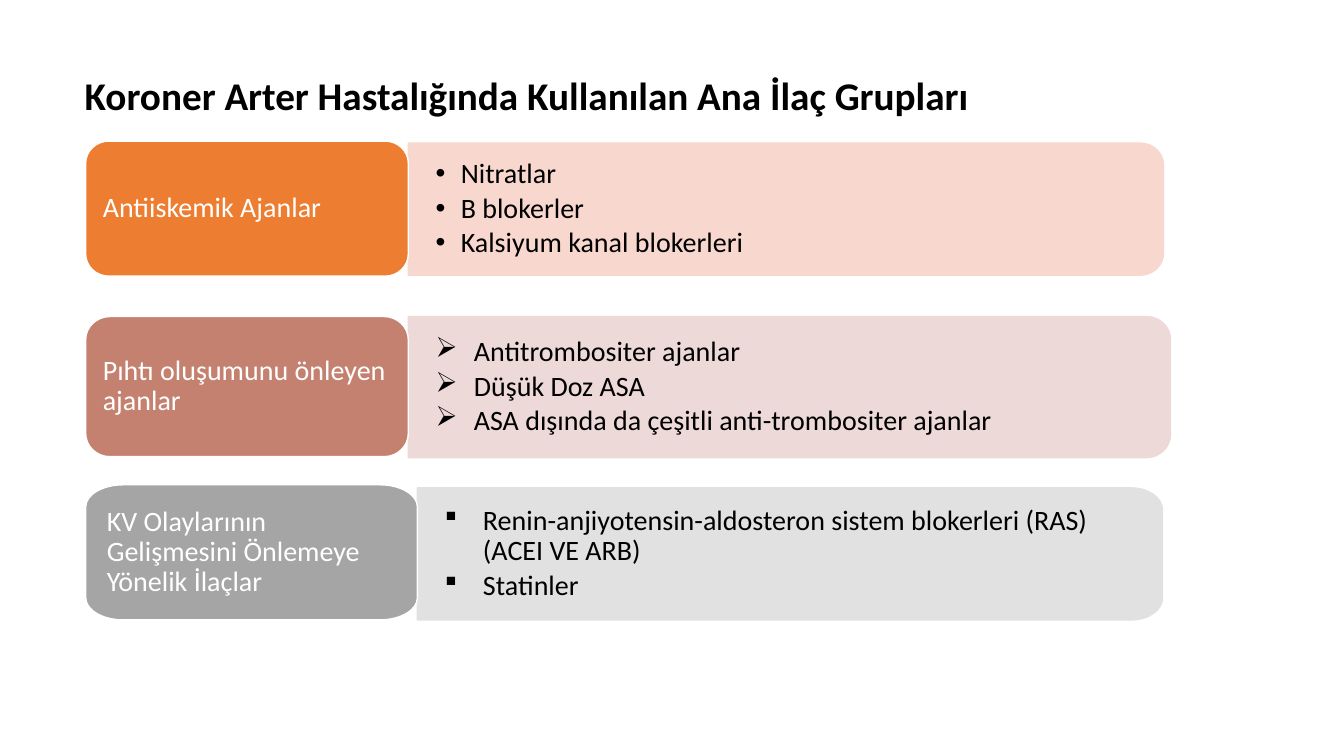
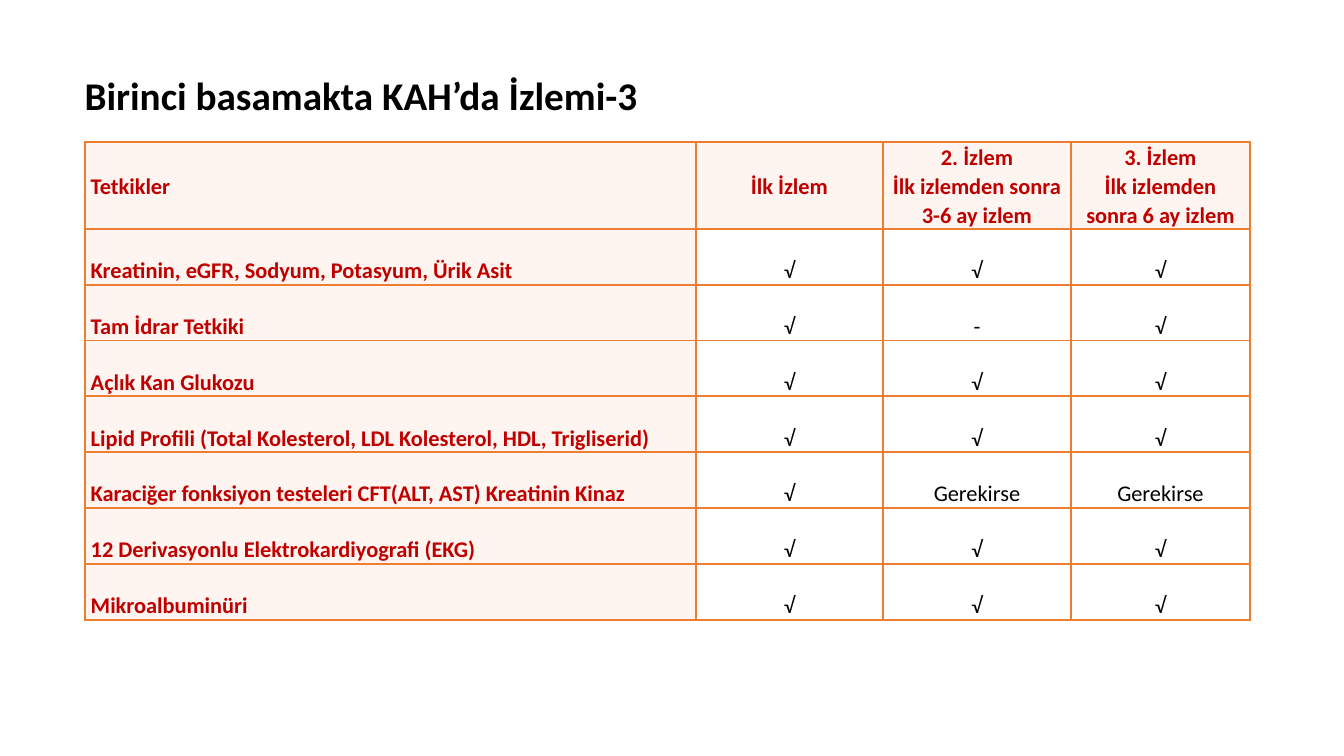
"""Build two slides on drug groups and follow-up in coronary artery disease."""
from pptx import Presentation
from pptx.dml.color import RGBColor
from pptx.enum.text import MSO_ANCHOR as ANCHOR, MSO_AUTO_SIZE as AUTO_SIZE, PP_ALIGN as ALIGN
from pptx.oxml import parse_xml
from pptx.oxml.ns import nsdecls, qn
from pptx.oxml.xmlchemy import OxmlElement
from pptx.util import Inches, Pt

FONT = "Calibri"
BLACK = RGBColor(0x00, 0x00, 0x00)
WHITE = RGBColor(0xFF, 0xFF, 0xFF)
ORANGE = RGBColor(0xED, 0x7D, 0x31)
PALE_ORANGE = RGBColor(0xF8, 0xD7, 0xCE)
ROSE = RGBColor(0xC4, 0x81, 0x70)
PALE_ROSE = RGBColor(0xED, 0xD9, 0xD7)
GRAY = RGBColor(0xA5, 0xA5, 0xA5)
PALE_GRAY = RGBColor(0xE1, 0xE1, 0xE1)
CREAM = RGBColor(0xFE, 0xF5, 0xF0)
DARK_RED = RGBColor(0xC0, 0x00, 0x00)

LABEL_LEFT = 0.85
CURVE = 0.45

DRUG_GROUPS = [
    dict(label="Antiiskemik Ajanlar", color=ORANGE, pale=PALE_ORANGE,
         label_box=(LABEL_LEFT, 1.4, 3.2, 1.34), label_radii=(0.23, 0.22), label_insets=(0.17, 0.12),
         panel_box=(4.05, 1.42, 7.49, 1.31), panel_radii=(0.23, 0.22), panel_insets=(0.27, 0.2, 0.34),
         bullet="•", bullet_font="Arial", indent=0.25,
         items=["Nitratlar", "B blokerler", "Kalsiyum kanal blokerleri"]),
    dict(label="Pıhtı oluşumunu önleyen ajanlar", color=ROSE, pale=PALE_ROSE,
         label_box=(LABEL_LEFT, 3.14, 3.2, 1.39), label_radii=(0.24, 0.23), label_insets=(0.17, 0.12),
         panel_box=(4.05, 3.14, 7.56, 1.4), panel_radii=(0.24, 0.23), panel_insets=(0.27, 0.2, 0.34),
         bullet="Ø", bullet_font="Wingdings", indent=0.38,
         items=["Antitrombositer ajanlar", "Düşük Doz ASA",
                "ASA dışında da çeşitli anti-trombositer ajanlar"]),
    dict(label="KV Olaylarının Gelişmesini Önlemeye Yönelik İlaçlar", color=GRAY, pale=PALE_GRAY,
         label_box=(LABEL_LEFT, 4.81, 3.29, 1.34), label_radii=(0.37, 0.22), label_insets=(0.21, 0.16),
         panel_box=(4.14, 4.84, 7.39, 1.31), panel_radii=(0.31, 0.22), panel_insets=(0.27, 0.23, 0.36),
         bullet="§", bullet_font="Wingdings", indent=0.38,
         items=["Renin-anjiyotensin-aldosteron sistem blokerleri (RAS) (ACEI VE ARB)", "Statinler"]),
]

COLUMN_WIDTHS = [6.06, 1.86, 1.86, 1.78]
HEADER = ["Tetkikler", "İlk İzlem", "2. İzlem\nİlk izlemden sonra 3-6 ay izlem",
          "3. İzlem\nİlk izlemden sonra 6 ay izlem"]
TESTS = [
    ["Kreatinin, eGFR, Sodyum, Potasyum, Ürik Asit", "√", "√", "√"],
    ["Tam İdrar Tetkiki", "√", "-", "√"],
    ["Açlık Kan Glukozu", "√", "√", "√"],
    ["Lipid Profili (Total Kolesterol, LDL Kolesterol, HDL, Trigliserid)", "√", "√", "√"],
    ["Karaciğer fonksiyon testeleri CFT(ALT, AST) Kreatinin Kinaz", "√", "Gerekirse", "Gerekirse"],
    ["12 Derivasyonlu Elektrokardiyografi (EKG)", "√", "√", "√"],
    ["Mikroalbuminüri", "√", "√", "√"],
]
HEADER_HEIGHT = 0.86
ROW_HEIGHT = 3.88 / len(TESTS)


def format_paragraph(p, size, color, bold=False, align=ALIGN.LEFT, spacing=1.0, after=0):
    """Set the layout of a paragraph and the font of its runs."""
    p.alignment = align
    p.line_spacing = spacing
    p.space_before = Pt(0)
    p.space_after = Pt(after)
    for r in p.runs:
        r.font.name = FONT
        r.font.size = Pt(size)
        r.font.bold = bold
        r.font.color.rgb = color


def add_bullet(p, char, font, indent):
    """Give a paragraph a hanging bullet."""
    pPr = p._p.get_or_add_pPr()
    pPr.set("marL", str(Inches(indent)))
    pPr.set("indent", str(-Inches(indent)))
    for tag, key, value in (("a:buFont", "typeface", font), ("a:buChar", "char", char)):
        bu = OxmlElement(tag)
        bu.set(key, value)
        pPr.append(bu)


def add_titled_slide(prs, title):
    """Add a slide with the shared title style."""
    slide = prs.slides.add_slide(prs.slide_layouts[5])
    sp = slide.shapes.title
    sp.left, sp.top, sp.width, sp.height = map(Inches, (0.74, 0.66, 10, 0.57))
    tf = sp.text_frame
    tf.text = title
    tf.word_wrap = True
    tf.auto_size = AUTO_SIZE.SHAPE_TO_FIT_TEXT
    tf.vertical_anchor = ANCHOR.TOP
    format_paragraph(tf.paragraphs[0], 28, BLACK, bold=True)
    return slide


def corner_points(x, y, dx, dy):
    """Return start, two controls and end of a curve from (x + dx, y) or (x, y + dy)."""
    along_x = [(x + dx, y), (x + dx * CURVE, y)]
    along_y = [(x, y + dy * CURVE), (x, y + dy)]
    points = along_x + along_y
    return points if dx * dy < 0 else points[::-1]


def bend_corners(sp, count):
    """Turn the leading line segments into the curves of count corners."""
    outline = next(sp._element.iter(qn("a:path")))
    lines = outline.findall(qn("a:lnTo"))
    for i in range(count):
        curve = OxmlElement("a:cubicBezTo")
        corner = lines[4 * i:4 * i + 3]
        corner[0].addprevious(curve)
        for line in corner:
            curve.append(line[0])
            outline.remove(line)


def add_rounded_box(slide, box, radii, fill, line, insets, text, square_left=False):
    """Add a text box shape with elliptical corners, square on the left if asked."""
    left, top, width, height = box
    right, bottom = left + width, top + height
    rx, ry = radii
    points = corner_points(right, top, -rx, ry) + corner_points(right, bottom, -rx, -ry)
    if square_left:
        points += [(left, bottom), (left, top)]
    else:
        points += corner_points(left, bottom, rx, -ry) + corner_points(left, top, rx, ry)
    points = [(Inches(x), Inches(y)) for x, y in points]
    builder = slide.shapes.build_freeform(*points[0])
    builder.add_line_segments(points[1:], close=True)
    sp = builder.convert_to_shape()
    bend_corners(sp, 2 if square_left else 4)
    sp.shadow.inherit = False
    sp.fill.solid()
    sp.fill.fore_color.rgb = fill
    sp.line.color.rgb = line
    sp.line.width = Pt(1)
    tf = sp.text_frame
    tf.text = text
    tf.word_wrap = True
    tf.vertical_anchor = ANCHOR.MIDDLE
    tf.margin_left, tf.margin_top, tf.margin_right = map(Inches, insets)
    tf.margin_bottom = tf.margin_top
    return sp


def add_panel(slide, group):
    """Add the pale panel that lists the drugs of a group."""
    sp = add_rounded_box(slide, group["panel_box"], group["panel_radii"], group["pale"], group["pale"],
                         group["panel_insets"], "\n".join(group["items"]), square_left=True)
    for p in sp.text_frame.paragraphs:
        add_bullet(p, group["bullet"], group["bullet_font"], group["indent"])
        format_paragraph(p, 20, BLACK, spacing=0.9, after=3)


def add_label(slide, group):
    """Add the coloured label that names a group."""
    side, top = group["label_insets"]
    sp = add_rounded_box(slide, group["label_box"], group["label_radii"], group["color"], WHITE,
                         (side, top, side), group["label"])
    format_paragraph(sp.text_frame.paragraphs[0], 20, WHITE, spacing=0.9)


def add_borders(cell, color, width):
    """Draw all four borders of a table cell."""
    tcPr = cell._tc.get_or_add_tcPr()
    for i, side in enumerate("LRTB"):
        tcPr.insert(i, parse_xml(
            f'<a:ln{side} {nsdecls("a")} w="{Pt(width)}"><a:solidFill>'
            f'<a:srgbClr val="{color}"/></a:solidFill></a:ln{side}>'))


def format_cell(cell, text, is_header, is_first):
    """Fill in and format one cell of the follow-up table."""
    cell.text_frame.text = text
    cell.vertical_anchor = ANCHOR.MIDDLE
    cell.margin_left = cell.margin_right = Inches(0.06)
    cell.margin_top, cell.margin_bottom = Inches(0.01), 0
    heading = is_header or is_first
    if heading:
        cell.fill.solid()
        cell.fill.fore_color.rgb = CREAM
    else:
        cell.fill.background()
    add_borders(cell, ORANGE, 1.5)
    for p in cell.text_frame.paragraphs:
        format_paragraph(p, 16, DARK_RED if heading else BLACK, bold=heading,
                         align=ALIGN.LEFT if is_first else ALIGN.CENTER,
                         spacing=1.05 if is_header else 2.0)


def add_followup_table(slide):
    """Add the table of tests at each follow-up."""
    rows = [HEADER] + TESTS
    heights = [HEADER_HEIGHT] + [ROW_HEIGHT] * len(TESTS)
    frame = slide.shapes.add_table(len(rows), len(HEADER), Inches(0.84), Inches(1.41),
                                   Inches(sum(COLUMN_WIDTHS)), Inches(sum(heights)))
    table = frame.table
    table.first_row = table.horz_banding = False
    for column, width in zip(table.columns, COLUMN_WIDTHS):
        column.width = Inches(width)
    for i, (row, height) in enumerate(zip(rows, heights)):
        table.rows[i].height = Inches(height)
        for j, text in enumerate(row):
            format_cell(table.cell(i, j), text, i == 0, j == 0)


def main():
    """Build and save the presentation."""
    prs = Presentation()
    prs.slide_width, prs.slide_height = Inches(13.33), Inches(7.5)

    slide = add_titled_slide(prs, "Koroner Arter Hastalığında Kullanılan Ana İlaç Grupları")
    for group in DRUG_GROUPS:
        add_panel(slide, group)
        add_label(slide, group)

    slide = add_titled_slide(prs, "Birinci basamakta KAH’da İzlemi-3")
    add_followup_table(slide)
    prs.save("out.pptx")


if __name__ == "__main__":
    main()
